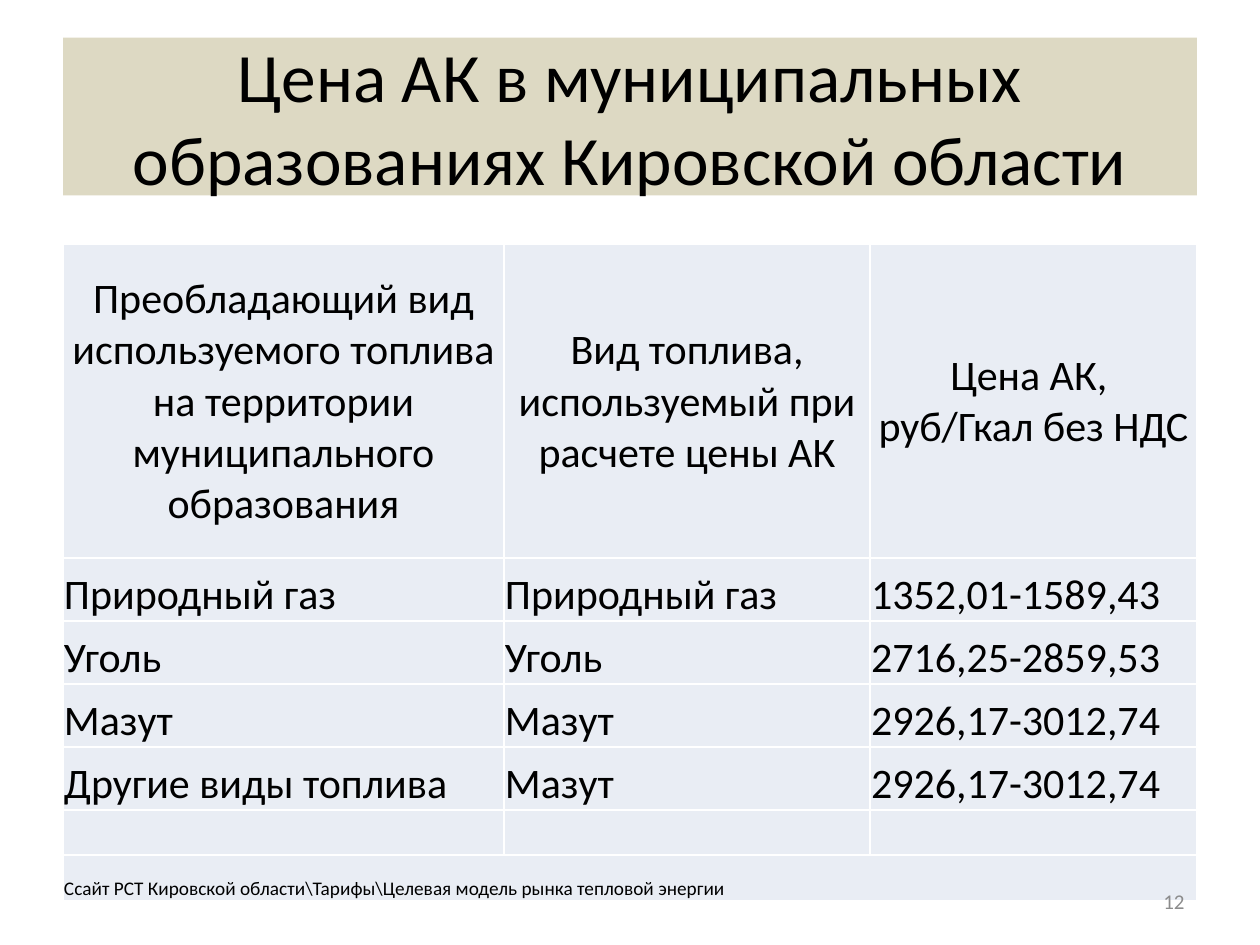
from dataclasses import dataclass

from lxml.etree import SubElement
from pptx import Presentation
from pptx.dml.color import RGBColor
from pptx.enum.text import MSO_ANCHOR, MSO_AUTO_SIZE, PP_ALIGN
from pptx.oxml.ns import qn
from pptx.util import Cm, Pt


@dataclass(frozen=True)
class Theme:
    font: str = "Calibri"
    ink: str = "000000"
    muted: str = "8C8C8C"
    title_fill: str = "DDD9C3"
    cell_fill: str = "E9EDF4"
    border: str = "FFFFFF"
    title_size: float = 39.6
    table_size: float = 24
    source_size: float = 11
    number_size: float = 12


class SlideBuilder:
    def __init__(self, slide, theme):
        self.slide = slide
        self.theme = theme

    def style_text(self, frame, size, color, align, anchor):
        frame.word_wrap = True
        frame.vertical_anchor = anchor
        for paragraph in frame.paragraphs:
            paragraph.alignment = align
            paragraph.font.name = self.theme.font
            paragraph.font.size = Pt(size)
            paragraph.font.color.rgb = RGBColor.from_string(color)

    def title(self, text, left, top, width, height):
        title = self.slide.shapes.title
        title.left, title.top, title.width, title.height = map(Cm, (left, top, width, height))
        title.fill.solid()
        title.fill.fore_color.rgb = RGBColor.from_string(self.theme.title_fill)
        title.text_frame.text = text
        title.text_frame.auto_size = MSO_AUTO_SIZE.NONE
        self.style_text(title.text_frame, self.theme.title_size, self.theme.ink,
                        PP_ALIGN.CENTER, MSO_ANCHOR.MIDDLE)

    def cell(self, cell, text, size, align, anchor):
        cell.text = text
        cell.margin_left = cell.margin_right = cell.margin_top = Cm(0.02)
        cell.margin_bottom = Cm(0)
        self.style_text(cell.text_frame, size, self.theme.ink, align, anchor)
        cell.vertical_anchor = anchor
        properties = cell._tc.get_or_add_tcPr()
        for side in ("a:lnL", "a:lnR", "a:lnT", "a:lnB"):
            border = SubElement(properties, qn(side), w=str(Pt(1)))
            border_fill = SubElement(border, qn("a:solidFill"))
            SubElement(border_fill, qn("a:srgbClr"), val=self.theme.border)
        cell.fill.solid()
        cell.fill.fore_color.rgb = RGBColor.from_string(self.theme.cell_fill)

    def price_table(self, header, prices, source, left, top, widths, heights):
        rows = [header, *prices, [""] * len(header), [source] + [""] * (len(header) - 1)]
        table = self.slide.shapes.add_table(
            len(rows), len(widths), Cm(left), Cm(top), Cm(sum(widths)), Cm(sum(heights))
        ).table
        for column, width in zip(table.columns, widths):
            column.width = Cm(width)
        for row, height in zip(table.rows, heights):
            row.height = Cm(height)
        for row_index, texts in enumerate(rows):
            is_header = row_index == 0
            size = self.theme.table_size if row_index <= len(prices) else self.theme.source_size
            align = PP_ALIGN.CENTER if is_header else PP_ALIGN.LEFT
            anchor = MSO_ANCHOR.MIDDLE if is_header else MSO_ANCHOR.BOTTOM
            for column_index, text in enumerate(texts):
                self.cell(table.cell(row_index, column_index), text, size, align, anchor)
        last_row = len(rows) - 1
        table.cell(last_row, 0).merge(table.cell(last_row, len(widths) - 1))

    def page_number(self, text, left, top, width, height):
        number = self.slide.shapes.add_textbox(Cm(left), Cm(top), Cm(width), Cm(height))
        number.text_frame.text = text
        self.style_text(number.text_frame, self.theme.number_size, self.theme.muted,
                        PP_ALIGN.RIGHT, MSO_ANCHOR.MIDDLE)


def main():
    presentation = Presentation()
    presentation.slide_width, presentation.slide_height = Cm(25.4), Cm(19.05)
    slide = presentation.slides.add_slide(presentation.slide_layouts[5])
    builder = SlideBuilder(slide, Theme())

    builder.title("Цена АК в муниципальных образованиях Кировской области",
                  1.27, 0.76, 22.86, 3.18)
    builder.price_table(
        header=[
            "Преобладающий вид используемого топлива на территории муниципального образования",
            "Вид топлива, используемый при расчете цены АК",
            "Цена АК, \nруб/Гкал без НДС",
        ],
        prices=[
            ["Природный газ", "Природный газ", "1352,01-1589,43"],
            ["Уголь", "Уголь", "2716,25-2859,53"],
            ["Мазут", "Мазут", "2926,17-3012,74"],
            ["Другие виды топлива", "Мазут", "2926,17-3012,74"],
        ],
        source="Ссайт РСТ Кировской области\\Тарифы\\Целевая модель рынка тепловой энергии",
        left=1.27,
        top=4.93,
        widths=[8.89, 7.38, 6.59],
        heights=[6.32] + [1.27] * 4 + [0.91] * 2,
    )
    builder.page_number("12", 18.2, 17.66, 5.93, 1.01)
    presentation.save("out.pptx")


if __name__ == "__main__":
    main()
